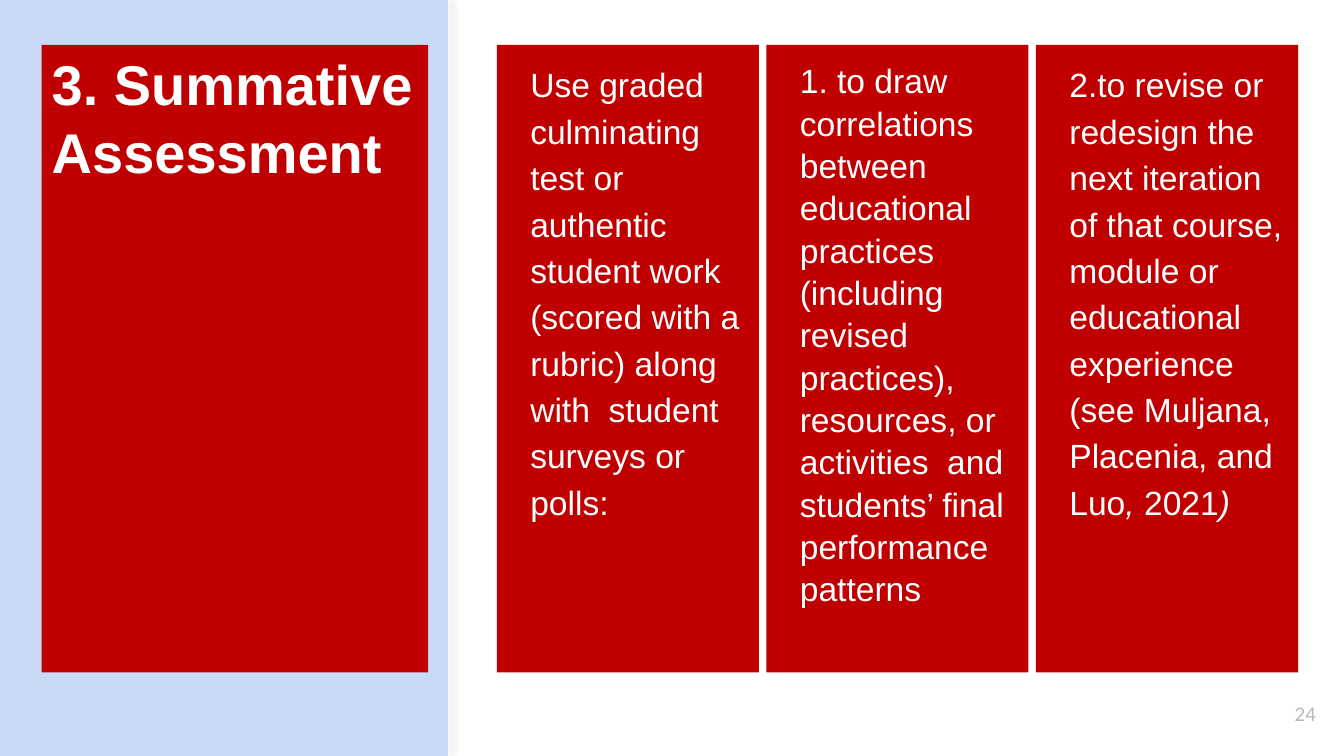
"""Build the Summative Assessment slide: a title panel beside three text panels."""
from lxml import etree
from pptx import Presentation, util as u
from pptx.dml.color import RGBColor
from pptx.enum import shapes, text
from pptx.oxml import ns

RED = RGBColor(0xC0, 0x00, 0x00)
BLUE = RGBColor(0xC9, 0xDA, 0xF8)
WHITE = RGBColor(0xFF, 0xFF, 0xFF)
EDGE_GREY = RGBColor(0xF2, 0xF2, 0xF2)
NUMBER_GREY = RGBColor(0xB7, 0xB7, 0xB7)

HEADING = "3. Summative Assessment"
PAGE_NUMBER = "24"
PANELS = [
    (1.15, [("Use graded culminating test or authentic student work (scored with a "
             "rubric) along with  student surveys or polls:", False)]),
    (1.05, [("1. to draw correlations between educational practices (including revised "
             "practices), resources, or activities  and students’ final performance "
             "patterns", False)]),
    (1.15, [("2.to revise or redesign the next iteration of that course, module or "
             "educational experience (see Muljana, Placenia, and Luo", False),
            (", ", True), ("2021", False), (")", True)]),
]

WIDTH, HEIGHT = 720, 405
SIDEBAR_WIDTH = 240
PANEL_TOP, PANEL_HEIGHT = 24.1, 336.2
PANEL_LEFT, PANEL_WIDTH, PANEL_STEP = 266.2, 140.4, 144.4


def set_frame(frame, side, top, anchor=text.MSO_ANCHOR.TOP):
    frame.word_wrap = True
    frame.auto_size = text.MSO_AUTO_SIZE.NONE
    frame.vertical_anchor = anchor
    frame.margin_left = frame.margin_right = u.Pt(side)
    frame.margin_top = frame.margin_bottom = u.Pt(top)


def style(run, size, color, font="Arial", bold=False, italic=False):
    run.font.name, run.font.size = font, u.Pt(size)
    run.font.bold, run.font.italic = bold, italic
    run.font.color.rgb = color


def place(shape, left, top, width, height):
    shape.left, shape.top = u.Pt(left), u.Pt(top)
    shape.width, shape.height = u.Pt(width), u.Pt(height)


def fill_shape(shape, color):
    shape.fill.solid()
    shape.fill.fore_color.rgb = color
    shape.line.fill.background()


def add_rectangle(slide, left, top, width, height, color):
    rectangle = slide.shapes.add_shape(
        shapes.MSO_SHAPE.RECTANGLE, u.Pt(left), u.Pt(top), u.Pt(width), u.Pt(height))
    rectangle.shadow.inherit = False
    fill_shape(rectangle, color)
    return rectangle


def add_sidebar(slide):
    edge = slide.shapes.add_connector(
        shapes.MSO_CONNECTOR.STRAIGHT, u.Pt(239), 0, u.Pt(239), u.Pt(HEIGHT))
    edge.line.color.rgb = EDGE_GREY
    edge.line.width = u.Pt(0.75)
    effects = etree.SubElement(edge._element.spPr, ns.qn("a:effectLst"))
    shadow = etree.SubElement(effects, ns.qn("a:outerShdw"), blurRad=str(u.Pt(4)),
                              dist=str(u.Pt(3)), dir="0", algn="l", rotWithShape="0")
    black = etree.SubElement(shadow, ns.qn("a:srgbClr"), val="000000")
    etree.SubElement(black, ns.qn("a:alpha"), val="40000")
    add_rectangle(slide, 0, 0, SIDEBAR_WIDTH, HEIGHT, BLUE)


def add_heading(slide):
    heading = slide.shapes.title
    slide.shapes._spTree.append(heading._element)
    place(heading, 22.3, PANEL_TOP, 207.1, PANEL_HEIGHT)
    fill_shape(heading, RED)
    heading.text_frame.text = HEADING
    set_frame(heading.text_frame, 5.4, 2.7)
    paragraph = heading.text_frame.paragraphs[0]
    paragraph.alignment = text.PP_ALIGN.LEFT
    style(paragraph.runs[0], 30, WHITE, bold=True)


def add_panel(slide, index, spacing, runs):
    panel = add_rectangle(slide, PANEL_LEFT + index * PANEL_STEP, PANEL_TOP,
                          PANEL_WIDTH, PANEL_HEIGHT, RED)
    set_frame(panel.text_frame, 7.2, 7.2)
    paragraph = panel.text_frame.paragraphs[0]
    paragraph.alignment = text.PP_ALIGN.LEFT
    paragraph.line_spacing = spacing
    properties = paragraph._p.get_or_add_pPr()
    properties.set("marL", str(u.Pt(10.8)))
    properties.set("indent", "0")
    for words, italic in runs:
        run = paragraph.add_run()
        run.text = words
        style(run, 18, WHITE, italic=italic)


def add_page_number(slide):
    number = slide.shapes.add_textbox(u.Pt(667.4), u.Pt(367.2), u.Pt(43.2), u.Pt(31))
    number.text_frame.text = PAGE_NUMBER
    set_frame(number.text_frame, 5.4, 2.7, text.MSO_ANCHOR.MIDDLE)
    paragraph = number.text_frame.paragraphs[0]
    paragraph.alignment = text.PP_ALIGN.RIGHT
    style(paragraph.runs[0], 10, NUMBER_GREY, font="Lato")


def main():
    deck = Presentation()
    deck.slide_width, deck.slide_height = u.Pt(WIDTH), u.Pt(HEIGHT)
    slide = deck.slides.add_slide(deck.slide_layouts[5])
    add_sidebar(slide)
    add_heading(slide)
    for index, (spacing, runs) in enumerate(PANELS):
        add_panel(slide, index, spacing, runs)
    add_page_number(slide)
    deck.save("out.pptx")


if __name__ == "__main__":
    main()
